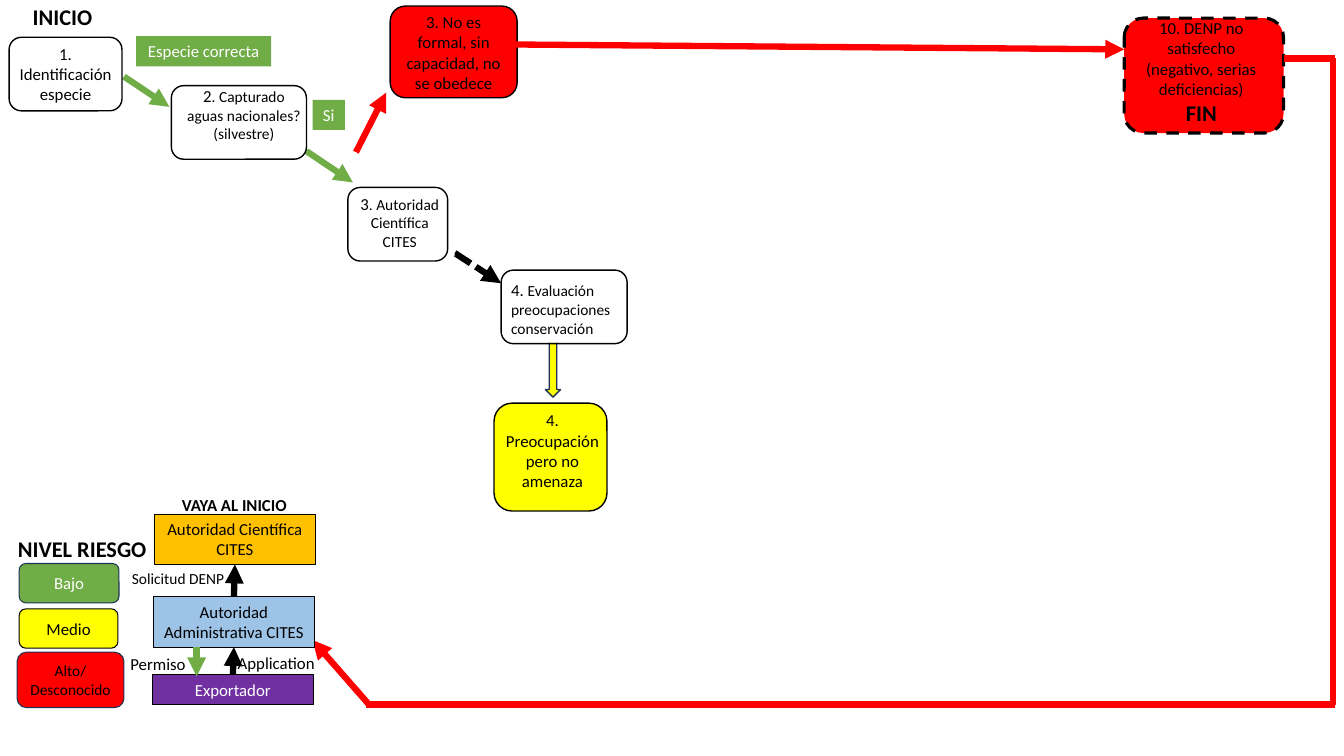
from lxml.etree import SubElement
from pptx import Presentation
from pptx.dml.color import RGBColor
from pptx.enum.dml import MSO_LINE
from pptx.enum.shapes import MSO_CONNECTOR, MSO_SHAPE
from pptx.enum.text import MSO_ANCHOR, MSO_AUTO_SIZE, PP_ALIGN
from pptx.oxml.ns import qn
from pptx.util import Inches, Pt

GREEN, YELLOW, RED = "70AD47", "FFFF00", "FF0000"
BLACK, WHITE, NAVY = "000000", "FFFFFF", "1E3256"
ORANGE, BLUE, PURPLE = "FFC000", "9DC3E6", "7030A0"
CENTER, LEFT, RIGHT = PP_ALIGN.CENTER, PP_ALIGN.LEFT, PP_ALIGN.RIGHT
RECT, ROUNDED = MSO_SHAPE.RECTANGLE, MSO_SHAPE.ROUNDED_RECTANGLE


def color(hex_code):
    return RGBColor.from_string(hex_code)


class FlowSlide:
    """Style and drawing methods for the current slide."""

    font = "Calibri"
    arrow_width = 4.5

    def __init__(self, slide):
        self.slide = slide

    def add_text(self, frame, paragraphs, ink=BLACK, align=CENTER,
                 anchor=MSO_ANCHOR.TOP, wrap=True, grow=True):
        """Each paragraph is a list of (text, size, bold) runs."""
        frame.word_wrap = wrap
        frame.vertical_anchor = anchor
        frame.auto_size = MSO_AUTO_SIZE.SHAPE_TO_FIT_TEXT if grow else MSO_AUTO_SIZE.NONE
        for index, runs in enumerate(paragraphs):
            paragraph = frame.add_paragraph() if index else frame.paragraphs[0]
            paragraph.alignment = align
            for text, size, bold in runs:
                run = paragraph.add_run()
                run.text = text
                run.font.name = self.font
                run.font.size = Pt(size)
                run.font.bold = bold
                run.font.color.rgb = color(ink)

    def block(self, kind, place, fill=None, line=None, width=1, dash=None):
        block = self.slide.shapes.add_shape(kind, *map(Inches, place))
        block.shadow.inherit = False
        if fill:
            block.fill.solid()
            block.fill.fore_color.rgb = color(fill)
        else:
            block.fill.background()
        if line:
            block.line.color.rgb = color(line)
            block.line.width = Pt(width)
            if dash:
                block.line.dash_style = dash
        else:
            block.line.fill.background()
        return block

    def box(self, place, text, fill, ink=BLACK, line=None, size=12):
        block = self.block(RECT, place, fill, line, 0.75)
        self.add_text(block.text_frame, [[(text, size, False)]], ink)

    def label(self, place, paragraphs, align=CENTER, wrap=True):
        label = self.slide.shapes.add_textbox(*map(Inches, place))
        self.add_text(label.text_frame, paragraphs, align=align, wrap=wrap)

    def step(self, text_place, outline_place, runs, align=CENTER):
        """White question text inside a rounded outline."""
        text = self.block(RECT, text_place, WHITE)
        self.add_text(text.text_frame, [runs], align=align)
        self.block(ROUNDED, outline_place, line=BLACK)

    def level(self, place, text, fill, ink, line, size=12):
        level = self.block(ROUNDED, place, fill, line, 0.75)
        self.add_text(level.text_frame, [[(text, size, False)]], ink,
                      anchor=MSO_ANCHOR.MIDDLE, grow=False)

    def line(self, start, end, hex_code, head=True, dash=None):
        line = self.slide.shapes.add_connector(
            MSO_CONNECTOR.STRAIGHT, *map(Inches, start + end))
        line.line.color.rgb = color(hex_code)
        line.line.width = Pt(self.arrow_width)
        if dash:
            line.line.dash_style = dash
        properties = line._element.spPr
        if head:
            SubElement(properties.find(qn("a:ln")), qn("a:tailEnd"), type="triangle")
        SubElement(properties, qn("a:effectLst"))


def main():
    deck = Presentation()
    deck.slide_width, deck.slide_height = Inches(13.33), Inches(7.5)
    flow = FlowSlide(deck.slides.add_slide(deck.slide_layouts[6]))

    # Low-risk path
    flow.line((1.23, 0.76), (1.68, 1.06), GREEN)
    flow.line((3.04, 1.5), (3.5, 1.81), GREEN)
    flow.box((3.1, 0.99, 0.32, 0.3), "Si", GREEN, WHITE)

    # High-risk outcomes
    flow.block(ROUNDED, (3.87, 0.06, 1.26, 0.91), RED, BLACK)
    flow.label((3.87, 0.07, 1.26, 1.13),
               [[("3. No es formal, sin capacidad, no se obedece", 12, False)]])
    flow.line((3.53, 1.51), (3.83, 0.92), RED)
    flow.block(ROUNDED, (11.15, 0.18, 1.58, 1.14), RED, BLACK, 2.25, MSO_LINE.DASH)
    flow.label((11.11, 0.13, 1.61, 1.34),
               [[("10. DENP no satisfecho", 12, False)],
                [("(negativo, serias deficiencias)", 12, False)],
                [("FIN", 16, True)]])
    flow.line((4.9, 0.44), (11.15, 0.49), RED)

    # Return route to the administrative authority
    flow.line((13.22, 0.58), (13.22, 6.99), RED, head=False)
    flow.line((12.74, 0.58), (13.24, 0.58), RED, head=False)
    flow.label((2.26, 6.43, 1.03, 0.3), [[("Application", 12, False)]], LEFT)
    flow.line((13.24, 6.99), (3.63, 6.99), RED, head=False)
    flow.line((3.66, 6.99), (3.1, 6.35), RED)

    # Medium-risk outcome
    flow.block(ROUNDED, (4.9, 4, 1.12, 1.07), YELLOW, BLACK)
    flow.label((4.9, 4.02, 1.16, 0.91),
               [[("4. Preocupación pero no amenaza", 12, False)]])
    flow.block(MSO_SHAPE.DOWN_ARROW, (5.41, 3.04, 0.15, 0.9), YELLOW, NAVY)
    flow.line((4.51, 2.51), (4.97, 2.81), BLACK, dash=MSO_LINE.SQUARE_DOT)

    # Numbered steps
    flow.step((0.09, 0.38, 1.12, 0.71), (0.09, 0.37, 1.12, 0.73),
              [("1. Identificación especie", 12, False)])
    flow.step((1.75, 0.8, 1.34, 0.67), (1.7, 0.85, 1.34, 0.73),
              [("2", 12, False), (". Capturado aguas nacionales? (silvestre)", 11, False)])
    flow.step((3.42, 1.87, 1.09, 0.67), (3.45, 1.86, 0.99, 0.73),
              [("3", 12, False), (". Autoridad Científica CITES", 11, False)])
    flow.step((4.97, 2.73, 1.25, 0.67), (4.97, 2.68, 1.25, 0.73),
              [("4. ", 12, False), ("Evaluación preocupaciones conservación", 11, False)],
              LEFT)
    flow.label((-0.01, -0.02, 1.26, 0.37), [[("INICIO", 16, True)]])
    flow.box((1.35, 0.36, 1.34, 0.3), "Especie correcta", GREEN, WHITE)

    # Permit application chain
    flow.box((1.53, 5.1, 1.6, 0.5), "Autoridad Científica CITES", ORANGE, line=BLACK)
    flow.box((1.52, 5.92, 1.6, 0.5), "Autoridad Administrativa CITES", BLUE, line=BLACK)
    flow.box((1.51, 6.69, 1.6, 0.3), "Exportador", PURPLE, WHITE, BLACK)
    flow.label((1.48, 4.86, 1.69, 0.3), [[("VAYA AL INICIO", 12, True)]])
    flow.label((1.17, 6.44, 0.77, 0.3), [[("Permiso", 12, False)]], RIGHT)
    flow.label((1.21, 5.6, 1.37, 0.29), [[("Solicitud DENP", 11, False)]], LEFT)
    flow.line((2.32, 5.92), (2.33, 5.6), BLACK)
    flow.line((2.31, 6.69), (2.32, 6.42), BLACK)
    flow.line((1.95, 6.42), (1.95, 6.71), GREEN)

    # Risk level legend
    flow.level((0.19, 5.59, 0.99, 0.39), "Bajo", GREEN, WHITE, NAVY)
    flow.level((0.19, 6.04, 0.98, 0.39), "Medio", YELLOW, BLACK, BLACK)
    flow.level((0.17, 6.47, 1.06, 0.55), "Alto/ Desconocido", RED, BLACK, NAVY, 11)
    flow.label((0.08, 5.26, 1.49, 0.37), [[("NIVEL RIESGO", 16, True)]], LEFT, wrap=False)

    deck.save("out.pptx")


if __name__ == "__main__":
    main()
